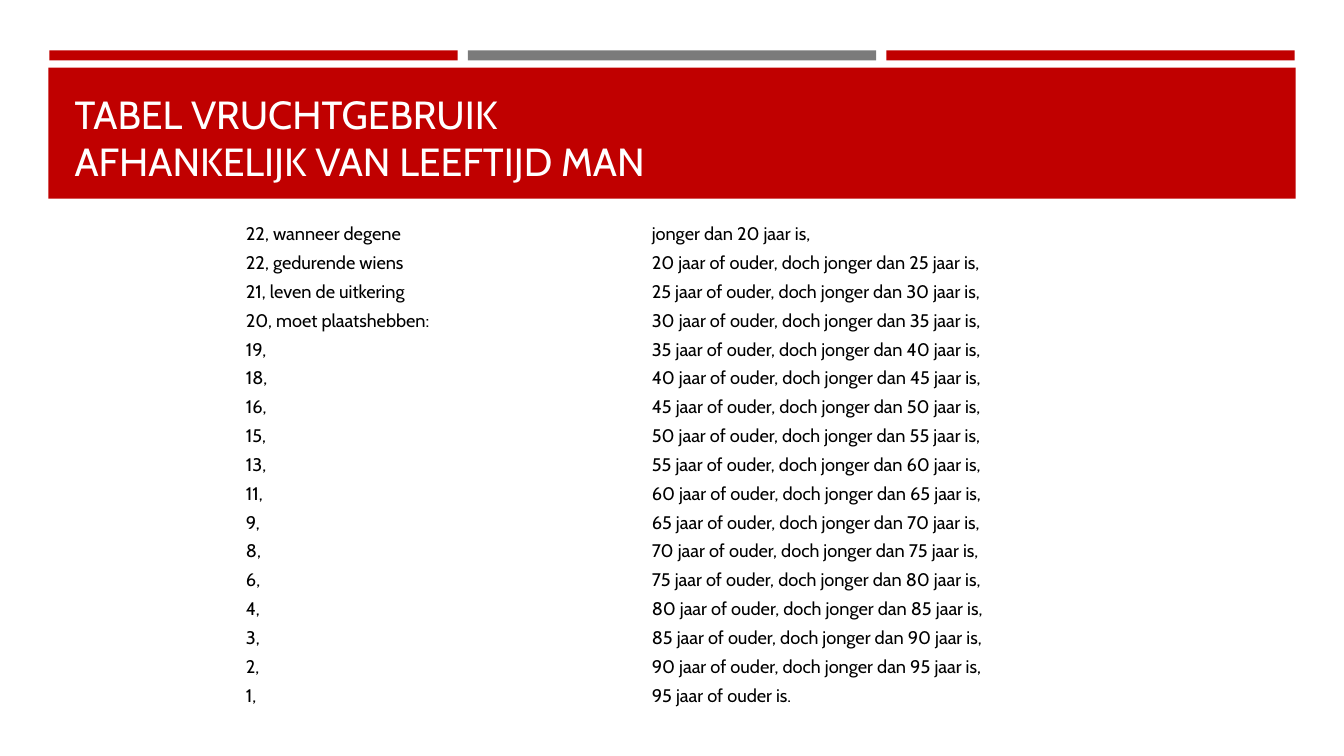
from pptx import Presentation
from pptx.dml.color import RGBColor
from pptx.enum.shapes import MSO_SHAPE
from pptx.enum.text import MSO_ANCHOR, MSO_AUTO_SIZE, PP_ALIGN
from pptx.util import Inches, Pt

COLORS = {"red": "C00000", "gray": "7B7B7B", "white": "FFFFFF", "black": "000000"}
FONT = "Cabin"


def add_bar(left, top, width, height, color):
    bar = page.shapes.add_shape(MSO_SHAPE.RECTANGLE, Inches(left), Inches(top),
                                Inches(width), Inches(height))
    bar.shadow.inherit = False
    bar.fill.solid()
    bar.fill.fore_color.rgb = RGBColor.from_string(COLORS[color])
    bar.line.fill.background()


def format_runs(para, size, color):
    para.alignment = PP_ALIGN.LEFT
    for span in para.runs:
        span.font.name = FONT
        span.font.size = Pt(size)
        span.font.color.rgb = RGBColor.from_string(COLORS[color])


deck = Presentation()
deck.slide_width = Inches(13.33)
deck.slide_height = Inches(7.5)
page = deck.slides.add_slide(deck.slide_layouts[5])

# Three accent bars above the title banner
for index, color in enumerate(["red", "gray", "red"]):
    add_bar(0.49 + index * 4.15, 0.5, 4.05, 0.1, color)
add_bar(0.48, 0.67, 12.37, 1.3, "red")

# Title, brought in front of the banner
title = page.shapes.title
title.element.getparent().append(title.element)
title.left, title.top = Inches(0.64), Inches(0.77)
title.width, title.height = Inches(12.06), Inches(1.11)
title.text_frame.text = "TABEL VRUCHTGEBRUIK\vAFHANKELIJK VAN LEEFTIJD MAN"
title.text_frame.auto_size = MSO_AUTO_SIZE.NONE
title.text_frame.vertical_anchor = MSO_ANCHOR.BOTTOM
format_runs(title.text_frame.paragraphs[0], 28, "white")

# Table wording: factor on the left, five-year age band on the right
factors = [22, 22, 21, 20, 19, 18, 16, 15, 13, 11, 9, 8, 6, 4, 3, 2, 1]
phrases = ["wanneer degene", "gedurende wiens", "leven de uitkering",
           "moet plaatshebben:"]
left_texts = [f"{factor}," for factor in factors]
for index, phrase in enumerate(phrases):
    left_texts[index] += f" {phrase}"
right_texts = ["jonger dan 20 jaar is,"]
for age in range(20, 95, 5):
    right_texts.append(f"{age} jaar of ouder, doch jonger dan {age + 5} jaar is,")
right_texts.append("95 jaar of ouder is.")

# Plain two-column table
row_count = len(factors)
table = page.shapes.add_table(row_count, 2, Inches(2.37), Inches(2.18),
                              Inches(8.05), Inches(4.87)).table
table.first_row = False
table.horz_banding = False
for row, texts in enumerate(zip(left_texts, right_texts)):
    for column, text in enumerate(texts):
        cell = table.cell(row, column)
        cell.fill.background()
        cell.vertical_anchor = MSO_ANCHOR.MIDDLE
        cell.margin_left = cell.margin_right = Inches(0.07)
        cell.margin_top = cell.margin_bottom = Inches(0.03)
        cell.text_frame.text = text
        format_runs(cell.text_frame.paragraphs[0], 13, "black")

deck.save("out.pptx")
